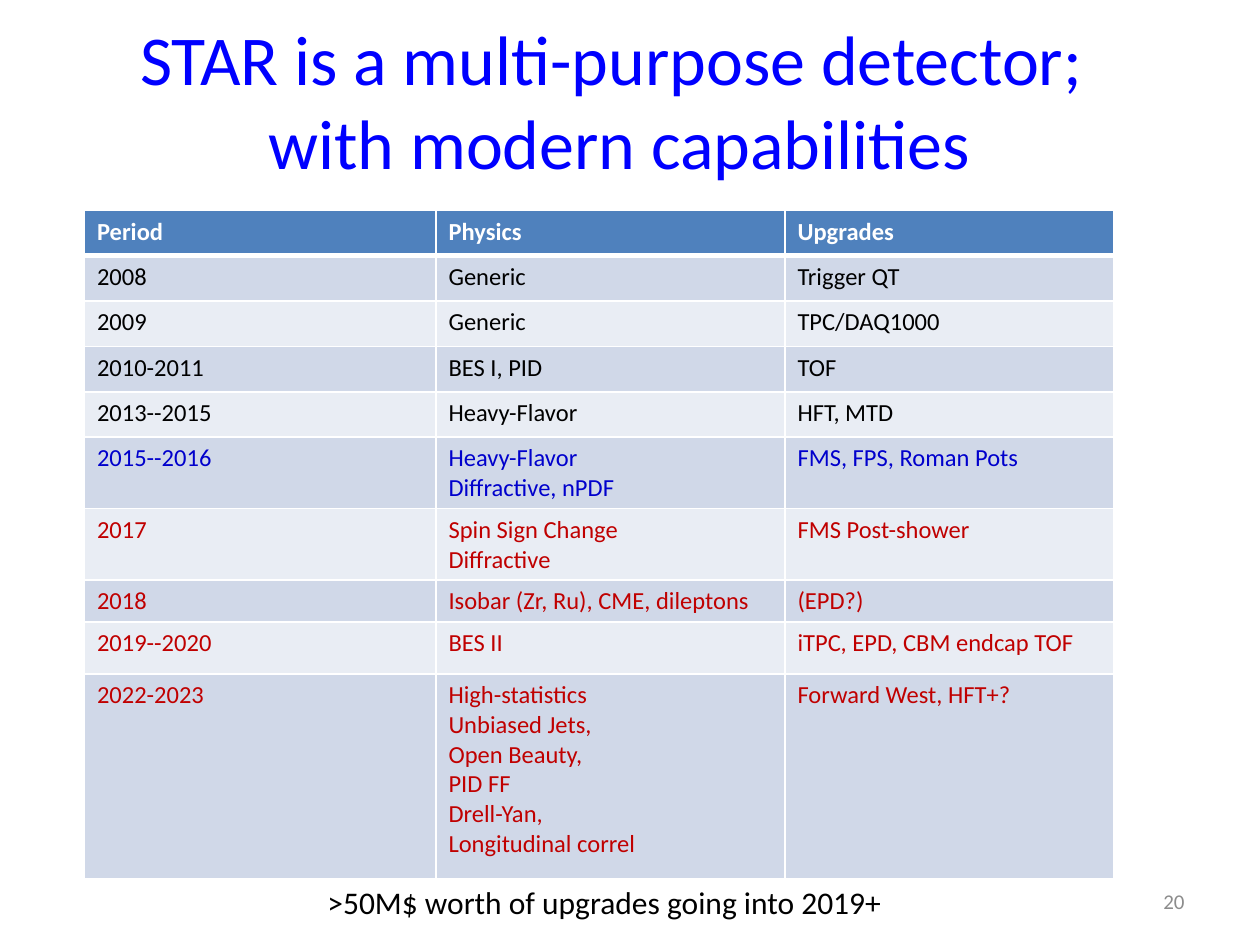
from lxml.etree import SubElement
from pptx import Presentation
from pptx.dml.color import RGBColor
from pptx.enum.text import MSO_ANCHOR as ANCHOR, PP_ALIGN as ALIGN
from pptx.oxml.ns import qn
from pptx.util import Inches, Pt

WHITE = RGBColor(0xFF, 0xFF, 0xFF)
BLACK = RGBColor(0x00, 0x00, 0x00)
GRAY = RGBColor(0x8C, 0x8C, 0x8C)
TITLE_BLUE = RGBColor(0x00, 0x00, 0xFF)
TEXT_BLUE = RGBColor(0x00, 0x00, 0xCC)
RED = RGBColor(0xC0, 0x00, 0x00)
HEADER = RGBColor(0x4F, 0x81, 0xBD)
BAND_DARK = RGBColor(0xD0, 0xD8, 0xE8)
BAND_LIGHT = RGBColor(0xE9, 0xED, 0xF4)


def write(tf, text, size, color, bold=False, align=ALIGN.LEFT):
    tf.text = text
    for p in tf.paragraphs:
        p.alignment = align
        for r in p.runs:
            for name, value in {"name": "Calibri", "size": Pt(size), "bold": bold}.items():
                setattr(r.font, name, value)
            r.font.color.rgb = color


def set_border(cell, side, width):
    ln = SubElement(cell._tc.get_or_add_tcPr(), qn(f"a:{side}"), w=str(Pt(width)))
    SubElement(SubElement(ln, qn("a:solidFill")), qn("a:srgbClr"), val=str(WHITE))


prs = Presentation()
prs.slide_width, prs.slide_height = Inches(10), Inches(7.5)
s = prs.slides.add_slide(prs.slide_layouts[6])

texts = [
    ((0, 0, 9.83, 1.58), "STAR is a multi-purpose detector; \vwith modern capabilities",
     40, TITLE_BLUE, ALIGN.CENTER, ANCHOR.MIDDLE, True),
    ((7.17, 6.95, 2.33, 0.4), "20", 12, GRAY, ALIGN.RIGHT, ANCHOR.MIDDLE, True),
    ((2.5, 6.96, 4.65, 0.4), ">50M$ worth of upgrades going into 2019+",
     18, BLACK, ALIGN.LEFT, ANCHOR.TOP, False),
]
for box, text, size, color, align, anchor, wrap in texts:
    tf = s.shapes.add_textbox(*map(Inches, box)).text_frame
    tf.word_wrap = wrap
    tf.vertical_anchor = anchor
    write(tf, text, size, color, align=align)

rows = [
    (0.36, WHITE, "Period", "Physics", "Upgrades"),
    (0.36, BLACK, "2008", "Generic", "Trigger QT"),
    (0.36, BLACK, "2009", "Generic", "TPC/DAQ1000"),
    (0.36, BLACK, "2010-2011", "BES I, PID", "TOF"),
    (0.36, BLACK, "2013--2015", "Heavy-Flavor", "HFT, MTD"),
    (0.56, TEXT_BLUE, "2015--2016", "Heavy-Flavor\vDiffractive, nPDF", "FMS, FPS, Roman Pots"),
    (0.56, RED, "2017", "Spin Sign Change\nDiffractive", "FMS Post-shower"),
    (0.33, RED, "2018", "Isobar (Zr, Ru), CME, dileptons", "(EPD?)"),
    (0.41, RED, "2019--2020", "BES II", "iTPC, EPD, CBM endcap TOF"),
    (1.63, RED, "2022-2023",
     "High-statistics\nUnbiased Jets, \vOpen Beauty,\nPID FF\nDrell-Yan, \vLongitudinal correl",
     "Forward West, HFT+?"),
]
table = s.shapes.add_table(len(rows), 3, Inches(0.67), Inches(1.67),
                           Inches(8.17), Inches(5.33)).table
for col, width in zip(table.columns, (2.79, 2.77, 2.61)):
    col.width = Inches(width)
for i, (height, color, *values) in enumerate(rows):
    table.rows[i].height = Inches(height)
    fill = HEADER if i == 0 else BAND_DARK if i % 2 else BAND_LIGHT
    for j, text in enumerate(values):
        cell = table.cell(i, j)
        write(cell.text_frame, text, 14, color, bold=i == 0)
        for side in ("lnL", "lnR", "lnT", "lnB"):
            thick = (i, side) in ((0, "lnB"), (1, "lnT"))
            set_border(cell, side, 3 if thick else 1)
        cell.fill.solid()
        cell.fill.fore_color.rgb = fill

prs.save("out.pptx")
